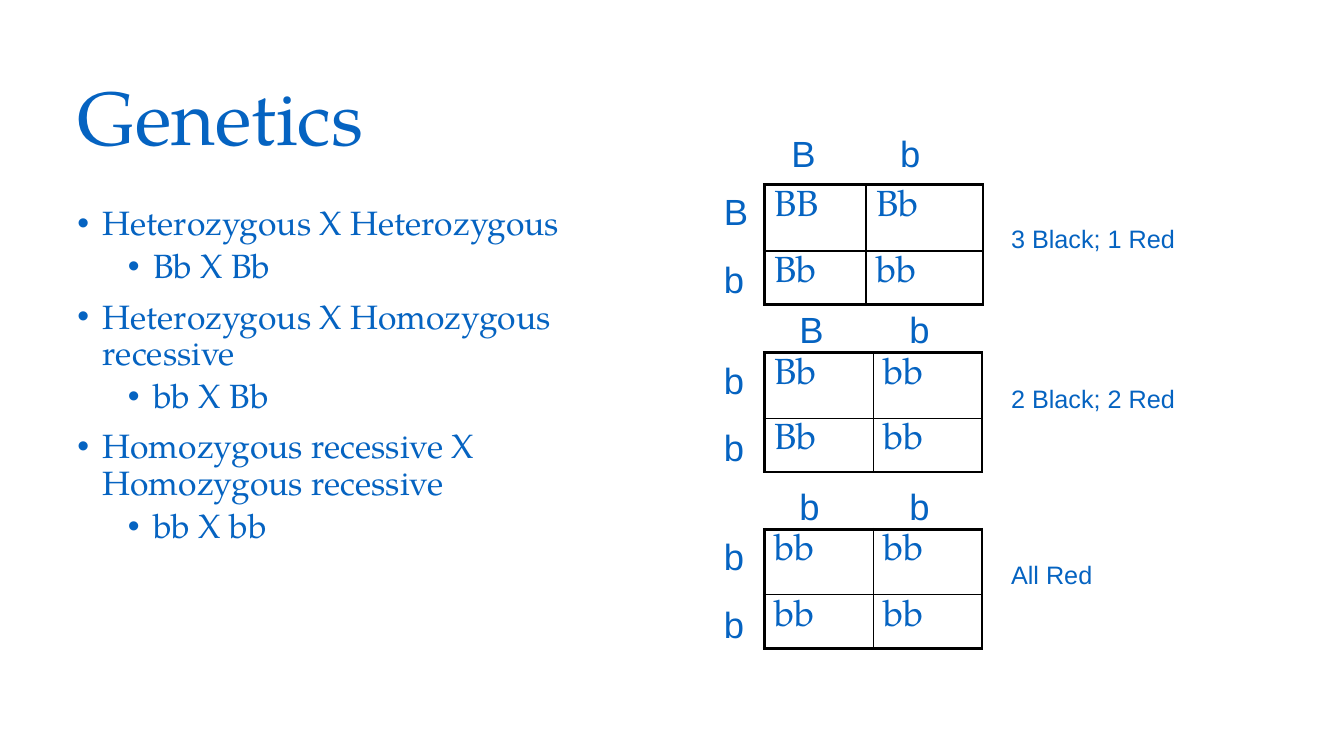
"""Build the Genetics slide with three Punnett squares."""
from dataclasses import dataclass

from lxml import etree
from pptx import Presentation
from pptx.dml.color import RGBColor
from pptx.enum.text import MSO_ANCHOR, MSO_AUTO_SIZE
from pptx.oxml.ns import qn
from pptx.util import Inches, Pt

MIDDLE = MSO_ANCHOR.MIDDLE
TOP = MSO_ANCHOR.TOP
GROW = MSO_AUTO_SIZE.SHAPE_TO_FIT_TEXT
FIXED = MSO_AUTO_SIZE.NONE

TITLE = "Genetics"
CROSSES = [
    ("Heterozygous X Heterozygous", "Bb X Bb"),
    ("Heterozygous X Homozygous recessive", "bb X Bb"),
    ("Homozygous recessive X Homozygous recessive", "bb X bb"),
]
SQUARES = [
    {"top": 1.83, "widths": (1.01, 1.16), "heights": (0.66, 0.53),
     "across": "Bb", "across_left": (7.75, 8.83), "across_top": 1.25, "down": "Bb",
     "cells": [("BB", "Bb"), ("Bb", "bb")],
     "result": "3 Black; 1 Red", "result_top": 2.17, "result_width": 1.84},
    {"top": 3.5, "widths": (1.08, 1.08), "heights": (0.65, 0.53),
     "across": "Bb", "across_left": (7.83, 8.92), "across_top": 3, "down": "bb",
     "cells": [("Bb", "bb"), ("Bb", "bb")],
     "result": "2 Black; 2 Red", "result_top": 3.75, "result_width": 1.84},
    {"top": 5.25, "widths": (1.08, 1.08), "heights": (0.65, 0.53),
     "across": "bb", "across_left": (7.83, 8.92), "across_top": 4.75, "down": "bb",
     "cells": [("bb", "bb"), ("bb", "bb")],
     "result": "All Red", "result_top": 5.5, "result_width": 1.04},
]
SQUARE_LEFT, DOWN_LEFT, RESULT_LEFT = 7.58, 7.08, 9.93
DOWN_STEP = 0.67
ALLELE_WIDTH = {"B": 0.45, "b": 0.41}


@dataclass(frozen=True)
class Theme:
    """Colours, fonts and type sizes."""
    ink: str = "0563C1"
    line: str = "000000"
    serif: str = "TeX Gyre Pagella"
    sans: str = "Arial"
    title: int = 54
    body: int = 24
    allele: int = 26
    result: int = 18
    outer: float = 2.25
    inner: float = 1


THEME = Theme()


def add_span(para, text, font, size):
    """Add formatted text to a paragraph."""
    span = para.add_run()
    span.text = text
    span.font.name = font
    span.font.size = Pt(size)
    span.font.color.rgb = RGBColor.from_string(THEME.ink)


def add_box(page, left, top, width, height, wrap=True, anchor=TOP):
    """Add an empty text box and return its text frame."""
    box = page.shapes.add_textbox(*map(Inches, (left, top, width, height)))
    frame = box.text_frame
    frame.word_wrap = wrap
    frame.auto_size = FIXED if wrap else GROW
    frame.vertical_anchor = anchor
    return frame


def add_label(page, text, left, top, width, height=0.54, size=THEME.allele):
    """Add a one-line label."""
    frame = add_box(page, left, top, width, height, wrap=False)
    add_span(frame.paragraphs[0], text, THEME.sans, size)


def add_bullet(para, text, indent, before):
    """Fill a paragraph as a bulleted line."""
    props = para._p.get_or_add_pPr()
    props.set("marL", str(Inches(indent)))
    props.set("indent", str(Inches(-0.25)))
    etree.SubElement(props, qn("a:buFont")).set("typeface", THEME.sans)
    etree.SubElement(props, qn("a:buChar")).set("char", "•")
    para.line_spacing = 0.9
    para.space_before = Pt(before)
    add_span(para, text, THEME.serif, THEME.body)


def add_borders(cell, widths):
    """Draw the sides of a cell, given widths by side."""
    props = cell._tc.get_or_add_tcPr()
    for side, width in widths.items():
        line = etree.SubElement(props, qn(f"a:ln{side}"), w=str(Pt(width)))
        fill = etree.SubElement(line, qn("a:solidFill"))
        etree.SubElement(fill, qn("a:srgbClr")).set("val", THEME.line)


def add_square(page, square):
    """Add a Punnett square with its alleles and result."""
    widths, heights = square["widths"], square["heights"]
    extent = (SQUARE_LEFT, square["top"], sum(widths), sum(heights))
    table = page.shapes.add_table(2, 2, *map(Inches, extent)).table
    table.first_row = table.horz_banding = False
    for index in range(2):
        table.columns[index].width = Inches(widths[index])
        table.rows[index].height = Inches(heights[index])
    for row, genotypes in enumerate(square["cells"]):
        for column, genotype in enumerate(genotypes):
            cell = table.cell(row, column)
            add_borders(cell, {
                "L": THEME.inner if column else THEME.outer,
                "R": THEME.outer if column else THEME.inner,
                "T": THEME.inner if row else THEME.outer,
                "B": THEME.outer if row else THEME.inner,
            })
            cell.fill.background()
            add_span(cell.text_frame.paragraphs[0], genotype, THEME.serif, THEME.allele)
    for allele, left in zip(square["across"], square["across_left"]):
        add_label(page, allele, left, square["across_top"], ALLELE_WIDTH[allele])
    for index, allele in enumerate(square["down"]):
        add_label(page, allele, DOWN_LEFT, square["top"] + index * DOWN_STEP,
                  ALLELE_WIDTH[allele])
    add_label(page, square["result"], RESULT_LEFT, square["result_top"],
              square["result_width"], height=0.4, size=THEME.result)


def main():
    """Lay out the slide and save it."""
    deck = Presentation()
    deck.slide_width, deck.slide_height = Inches(13.33), Inches(7.5)
    page = deck.slides.add_slide(deck.slide_layouts[6])
    heading = add_box(page, 0.67, 0.58, 12, 1.25, anchor=MIDDLE).paragraphs[0]
    heading.line_spacing = 0.9
    add_span(heading, TITLE, THEME.serif, THEME.title)
    body = add_box(page, 0.67, 2, 5.89, 4.7)
    for index, (cross, alleles) in enumerate(CROSSES):
        para = body.add_paragraph() if index else body.paragraphs[0]
        add_bullet(para, cross, indent=0.25, before=10 if index else 0)
        add_bullet(body.add_paragraph(), alleles, indent=0.75, before=5)
    for square in SQUARES:
        add_square(page, square)
    deck.save("out.pptx")


if __name__ == "__main__":
    main()
